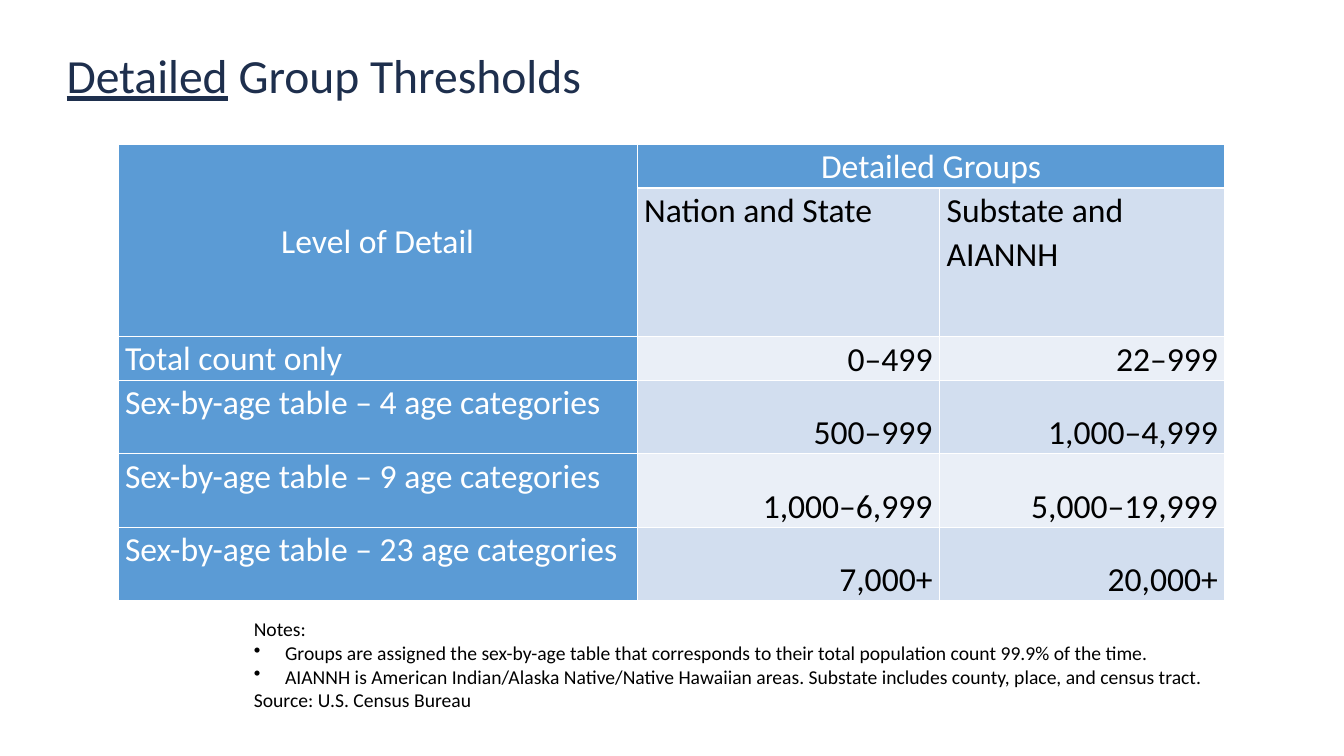
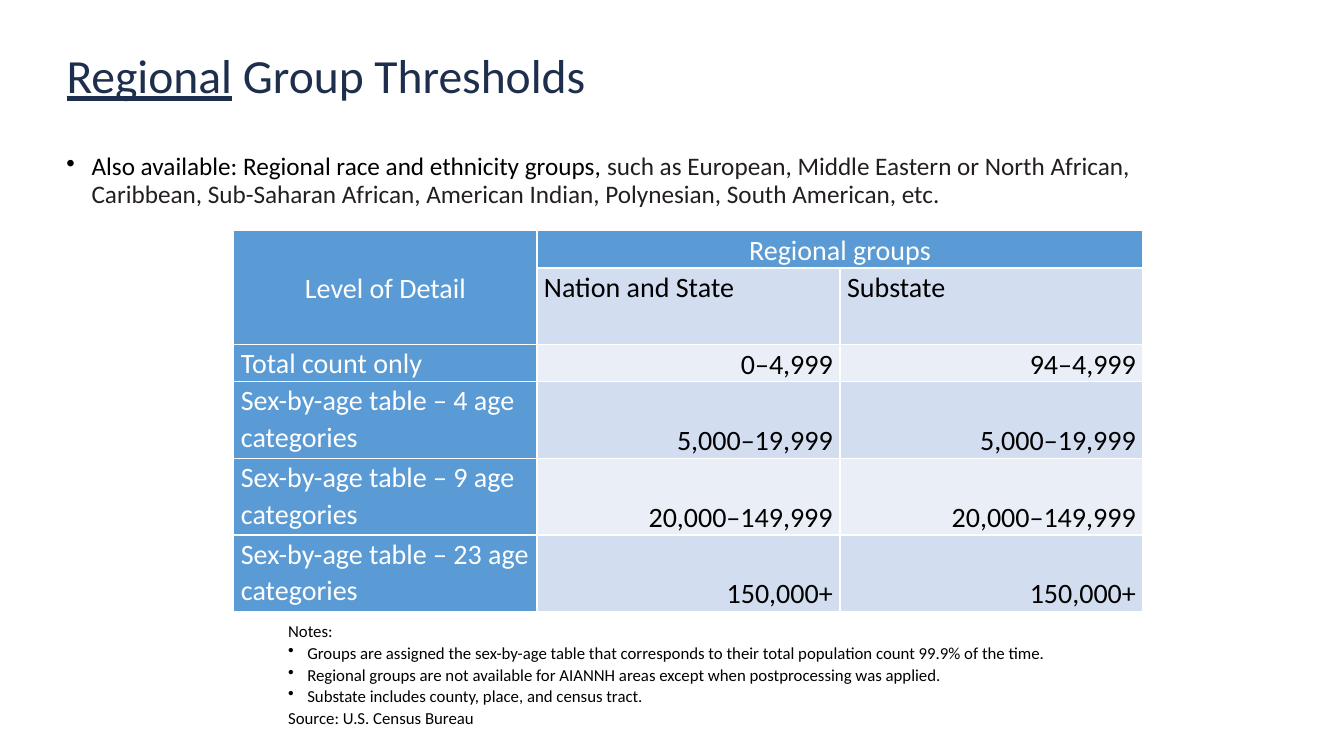
"""Build two slides of population thresholds for detailed and regional groups."""
import dataclasses

import lxml.etree
import pptx
import pptx.dml.color
import pptx.enum.text
import pptx.oxml
import pptx.oxml.ns
import pptx.util

ALIGN = pptx.enum.text.PP_ALIGN
ANCHOR = pptx.enum.text.MSO_ANCHOR


@dataclasses.dataclass(frozen=True)
class Theme:
    """Hold the colours, typeface and type sizes of the slides."""
    font: str = "Calibri"
    navy: str = "1E2F4D"
    header: str = "5B9BD5"
    bands: tuple = ("D2DEEF", "EAEFF7")
    white: str = "FFFFFF"
    black: str = "000000"
    charcoal: str = "231F20"
    title_size: int = 34
    body_size: int = 18
    tight: float = 0.9
    loose: float = 1.07


class Deck:
    """Draw styled elements on the current slide, placed in percent of its size."""

    def __init__(self, theme):
        """Start a widescreen presentation."""
        self.theme = theme
        self.presentation = pptx.Presentation()
        self.presentation.slide_width = pptx.util.Inches(13.33)
        self.presentation.slide_height = pptx.util.Inches(7.5)
        self.slide = None

    def across(self, share):
        """Turn a percentage of the slide width into a length."""
        return round(self.presentation.slide_width * share / 100)

    def down(self, share):
        """Turn a percentage of the slide height into a length."""
        return round(self.presentation.slide_height * share / 100)

    def box(self, left, top, width, height):
        """Turn four percentages into a position and size."""
        return self.across(left), self.down(top), self.across(width), self.down(height)

    def style(self, paragraph, size, color, spacing, align=ALIGN.LEFT):
        """Format a whole paragraph."""
        paragraph.alignment = align
        paragraph.line_spacing = spacing
        font = paragraph.font
        font.name, font.size = self.theme.font, pptx.util.Pt(size)
        font.color.rgb = pptx.dml.color.RGBColor.from_string(color)

    def bullet(self, paragraph, indent):
        """Give a paragraph a round bullet and a hanging indent in inches."""
        properties = paragraph._p.get_or_add_pPr()
        hang = pptx.util.Inches(indent)
        properties.set("marL", str(hang))
        properties.set("indent", str(-hang))
        mark = lxml.etree.SubElement(properties, pptx.oxml.ns.qn("a:buChar"))
        mark.set("char", "•")

    def add_slide(self, underlined, rest):
        """Add a slide whose title opens with an underlined word."""
        self.slide = self.presentation.slides.add_slide(self.presentation.slide_layouts[5])
        title = self.slide.shapes.title
        title.left, title.top, title.width, title.height = self.box(4.2, 3.6, 91.45, 13.47)
        frame = title.text_frame
        frame.auto_size = pptx.enum.text.MSO_AUTO_SIZE.NONE
        frame.vertical_anchor = ANCHOR.MIDDLE
        paragraph = frame.paragraphs[0]
        self.style(paragraph, self.theme.title_size, self.theme.navy, self.theme.tight)
        first = paragraph.add_run()
        first.text = underlined
        first.font.underline = True
        paragraph.add_run().text = rest

    def add_frame(self, box):
        """Add a wrapping text box and return its text frame."""
        frame = self.slide.shapes.add_textbox(*self.box(*box)).text_frame
        frame.word_wrap = True
        return frame

    def add_statement(self, box, lead, detail):
        """Add one bullet with a black lead and a charcoal continuation."""
        paragraph = self.add_frame(box).paragraphs[0]
        self.bullet(paragraph, 0.25)
        self.style(paragraph, self.theme.body_size, self.theme.black, self.theme.tight)
        paragraph.add_run().text = lead
        run = paragraph.add_run()
        run.text = detail
        run.font.color.rgb = pptx.dml.color.RGBColor.from_string(self.theme.charcoal)

    def add_notes(self, box, notes, size, indent, spacing):
        """Add bulleted notes between a heading and the source line."""
        frame = self.add_frame(box)
        lines = ["Notes:", *notes, "Source: U.S. Census Bureau"]
        for index, line in enumerate(lines):
            paragraph = frame.add_paragraph() if index else frame.paragraphs[0]
            if line in notes:
                self.bullet(paragraph, indent)
            self.style(paragraph, size, self.theme.black, spacing if index else self.theme.loose)
            paragraph.add_run().text = line

    def format_cell(self, cell, text, size, fill, color, align, anchor):
        """Set the borders, fill and text of a table cell."""
        properties = cell._tc.get_or_add_tcPr()
        for side in "LRTB":
            properties.append(pptx.oxml.parse_xml(
                f'<a:ln{side} {pptx.oxml.ns.nsdecls("a")} w="{pptx.util.Pt(1)}"><a:solidFill>'
                f'<a:srgbClr val="{self.theme.white}"/></a:solidFill></a:ln{side}>'))
        cell.fill.solid()
        cell.fill.fore_color.rgb = pptx.dml.color.RGBColor.from_string(fill)
        cell.margin_left = cell.margin_right = pptx.util.Inches(0.07)
        cell.margin_top = cell.margin_bottom = 0
        cell.vertical_anchor = anchor
        paragraph = cell.text_frame.paragraphs[0]
        self.style(paragraph, size, color, self.theme.loose, align)
        if text:
            paragraph.add_run().text = text

    def add_thresholds(self, left, top, columns, heights, size, rows):
        """Add a table with a two-row heading and a heading column."""
        theme = self.theme
        box = self.box(left, top, sum(columns), sum(heights))
        table = self.slide.shapes.add_table(len(rows), len(columns), *box).table
        table.first_row = table.horz_banding = False
        for column, width in zip(table.columns, columns):
            column.width = self.across(width)
        for row, height in zip(table.rows, heights):
            row.height = self.down(height)
        table.cell(0, 0).merge(table.cell(1, 0))
        table.cell(0, 1).merge(table.cell(0, 2))
        for i, texts in enumerate(rows):
            for j, text in enumerate(texts):
                heading = i == 0 or j == 0
                fill = theme.header if heading else theme.bands[(i + 1) % 2]
                color = theme.white if heading else theme.black
                if i == 0:
                    align, anchor = ALIGN.CENTER, ANCHOR.MIDDLE
                elif i == 1 or j == 0:
                    align, anchor = ALIGN.LEFT, ANCHOR.TOP
                else:
                    align, anchor = ALIGN.RIGHT, ANCHOR.BOTTOM
                self.format_cell(table.cell(i, j), text, size, fill, color, align, anchor)


def threshold_rows(group, areas, ranges):
    """Join the shared row labels with the heading and ranges of a group."""
    levels = ["Total count only"]
    levels += [f"Sex-by-age table – {count} age categories" for count in (4, 9, 23)]
    values = [(level, *pair) for level, pair in zip(levels, ranges)]
    return [("Level of Detail", group, ""), ("", *areas), *values]


def main():
    """Build and save both slides."""
    theme = Theme()
    deck = Deck(theme)
    assigned = ("Groups are assigned the sex-by-age table that corresponds to their "
                "total population count 99.9% of the time.")

    deck.add_slide("Detailed", " Group Thresholds")
    deck.add_thresholds(
        8.78, 19.07, [38.63, 22.5, 21.23], [5.75, 19.6, 5.75] + [9.73] * 3, 24,
        threshold_rows("Detailed Groups", ("Nation and State", "Substate and AIANNH"), [
            ("0–499", "22–999"), ("500–999", "1,000–4,999"),
            ("1,000–6,999", "5,000–19,999"), ("7,000+", "20,000+")]))
    deck.add_notes((18.15, 80.8, 72.3, 14.13), [
        assigned,
        "AIANNH is American Indian/Alaska Native/Native Hawaiian areas. "
        "Substate includes county, place, and census tract."], 14, 0.31, 1.0)

    deck.add_slide("Regional", " Group Thresholds")
    deck.add_statement(
        (4.2, 19.73, 88, 9.5), "Also available: Regional race and ethnicity groups, ",
        "such as European, Middle Eastern or North African, Caribbean, Sub-Saharan African, "
        "American Indian, Polynesian, South American, etc.")
    deck.add_thresholds(
        17.4, 30.53, [22.55] * 3, [4.93, 10.13] * 2 + [10.13] * 2, 20,
        threshold_rows("Regional groups", ("Nation and State", "Substate"), [
            ("0–4,999", "94–4,999"), ("5,000–19,999", "5,000–19,999"),
            ("20,000–149,999", "20,000–149,999"), ("150,000+", "150,000+")]))
    deck.add_notes((20.7, 81.33, 61.9, 15.6), [
        assigned,
        "Regional groups are not available for AIANNH areas except when "
        "postprocessing was applied.",
        "Substate includes county, place, and census tract."], 12, 0.19, theme.loose)

    deck.presentation.save("out.pptx")


if __name__ == "__main__":
    main()
